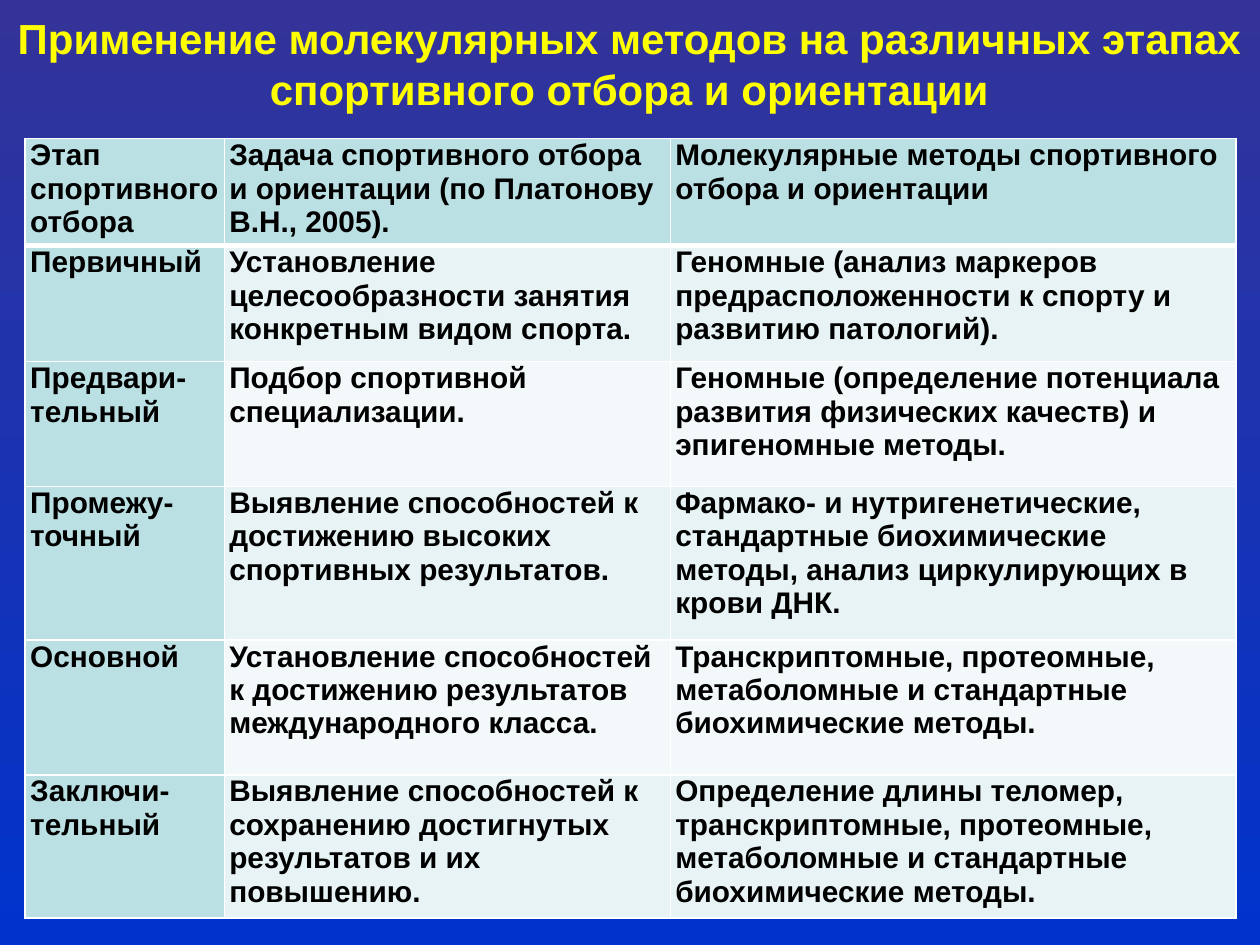
from lxml.etree import SubElement as Sub
from pptx import Presentation
from pptx.dml.color import RGBColor as Rgb
from pptx.enum.text import MSO_ANCHOR as Anchor, PP_ALIGN as Align
from pptx.oxml.ns import qn
from pptx.util import Inches, Pt

TITLE = ("Применение молекулярных методов на различных этапах "
         "спортивного отбора и ориентации")
ROWS = [
    ("Этап спортивного отбора",
     "Задача спортивного отбора и ориентации (по Платонову В.Н., 2005).",
     "Молекулярные методы спортивного отбора и ориентации"),
    ("Первичный",
     "Установление целесообразности занятия конкретным видом спорта.",
     "Геномные (анализ маркеров предрасположенности к спорту и развитию патологий)."),
    ("Предвари-тельный",
     "Подбор спортивной специализации.",
     "Геномные (определение потенциала развития физических качеств) и эпигеномные методы."),
    ("Промежу-точный",
     "Выявление способностей к достижению высоких спортивных результатов.",
     "Фармако- и нутригенетические, стандартные биохимические методы, "
     "анализ циркулирующих в крови ДНК."),
    ("Основной",
     "Установление способностей к достижению результатов международного класса.",
     "Транскриптомные, протеомные, метаболомные и стандартные биохимические методы."),
    ("Заключи-тельный",
     "Выявление способностей к сохранению достигнутых результатов и их повышению.",
     "Определение длины теломер, транскриптомные, протеомные, "
     "метаболомные и стандартные биохимические методы."),
]
WIDTHS = [1.58, 3.54, 4.49]
HEIGHTS = [0.85, 0.92, 0.99, 1.22, 1.07, 1.13]

THEME = {
    "font": "Arial", "title_size": 24, "cell_size": 17,
    "title": "FFFF00", "text": "000000", "line": "FFFFFF",
    "sky": ("333399", "0033CC"),
    "head": "BBE0E3", "bands": ("F3F9FA", "E7F3F4"),
    "thin": 1, "thick": 3,
}


def write(frame, text, size, color, align=Align.LEFT, spacing=None):
    frame.word_wrap = True
    para = frame.paragraphs[0]
    para.alignment = align
    if spacing:
        para.line_spacing = spacing
    run = para.add_run()
    run.text = text
    font = run.font
    font.name, font.size, font.bold = THEME["font"], Pt(size), True
    font.color.rgb = Rgb.from_string(color)


def border(cell, row):
    """Draw thin edges, with a thick rule between the header and the body."""
    props = cell._tc.get_or_add_tcPr()
    for side in "LRTB":
        thick = (row, side) in ((0, "B"), (1, "T"))
        width = THEME["thick" if thick else "thin"]
        line = Sub(props, qn("a:ln" + side), w=str(Pt(width)))
        fill = Sub(line, qn("a:solidFill"))
        Sub(fill, qn("a:srgbClr"), val=THEME["line"])


def paint(slide):
    fill = slide.background.fill
    fill.gradient()
    fill.gradient_angle = 270
    for stop, color in zip(fill.gradient_stops, THEME["sky"]):
        stop.color.rgb = Rgb.from_string(color)


def add_title(slide):
    box = slide.shapes.add_textbox(
        Inches(-0.2), Inches(-0.1), Inches(10.39), Inches(1.2))
    box.text_frame.vertical_anchor = Anchor.MIDDLE
    write(box.text_frame, TITLE, THEME["title_size"], THEME["title"],
          align=Align.CENTER, spacing=1.02)


def add_grid(slide):
    table = slide.shapes.add_table(
        len(ROWS), len(WIDTHS), Inches(0.2), Inches(1.1),
        Inches(sum(WIDTHS)), Inches(sum(HEIGHTS))).table
    for col, width in zip(table.columns, WIDTHS):
        col.width = Inches(width)
    for row, height in zip(table.rows, HEIGHTS):
        row.height = Inches(height)
    for r, texts in enumerate(ROWS):
        for c, text in enumerate(texts):
            cell = table.cell(r, c)
            cell.margin_left = cell.margin_right = Inches(0.04)
            cell.margin_top = cell.margin_bottom = 0
            border(cell, r)
            head = r == 0 or c == 0
            color = THEME["head"] if head else THEME["bands"][r % 2]
            cell.fill.solid()
            cell.fill.fore_color.rgb = Rgb.from_string(color)
            stage = r > 0 and c == 0
            write(cell.text_frame, text, THEME["cell_size"], THEME["text"],
                  align=Align.JUSTIFY if stage else Align.LEFT)


def main():
    deck = Presentation()
    deck.slide_width, deck.slide_height = Inches(10), Inches(7.5)
    slide = deck.slides.add_slide(deck.slide_layouts[6])
    paint(slide)
    add_title(slide)
    add_grid(slide)
    deck.save("out.pptx")


if __name__ == "__main__":
    main()
